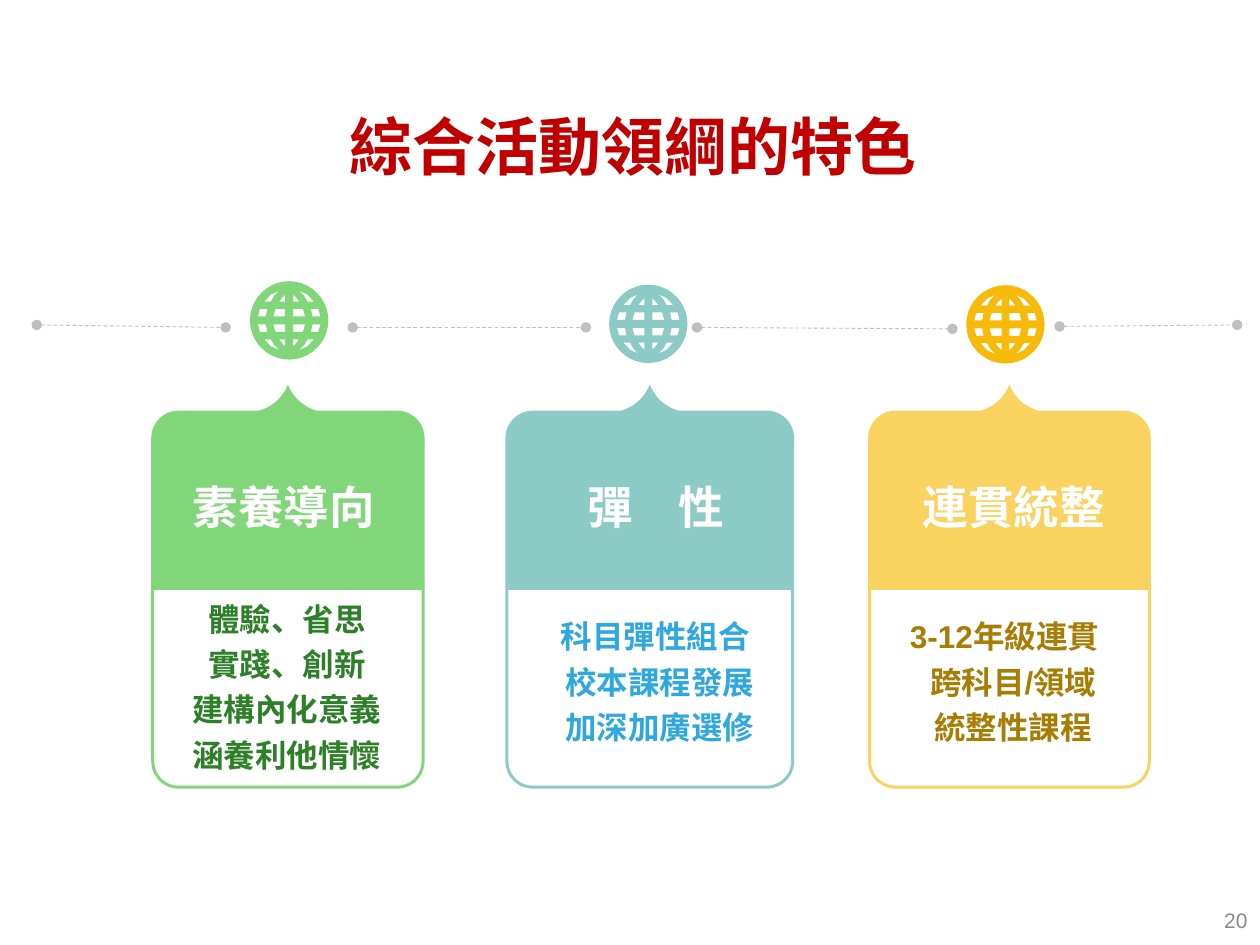
from itertools import product
from typing import NamedTuple

from lxml.etree import SubElement
from pptx import Presentation
from pptx.dml.color import RGBColor
from pptx.enum.dml import MSO_LINE
from pptx.enum.shapes import MSO_CONNECTOR
from pptx.enum.text import MSO_ANCHOR as Anchor, PP_ALIGN as Align
from pptx.oxml.ns import qn
from pptx.util import Cm, Pt

COLORS = {
    "title": "C00000", "white": "FFFFFF", "line": "BFBFBF", "number": "898989",
    "green": "81D67A", "green_text": "2E8028",
    "teal": "8CCBC5", "teal_text": "2FA7DF",
    "yellow": "FAD25F", "yellow_text": "A77D05", "amber": "F7BA0B",
}
Point = tuple[float, float]
TIP_Y, CARD_TOP, HEADER_BOTTOM, CARD_BOTTOM = 7.75, 8.28, 11.89, 15.9
CORNER, BORDER = 0.55, 0.06
GLOBE_RADIUS = 0.79
ARC = 0.55
GLOBE_CELLS: list[list[Point]] = [
    [(0.08, 0.08), (0.32, 0.08), (0.28, 0.23), (0.08, 0.23)],
    [(0.47, 0.08), (0.63, 0.08), (0.59, 0.23), (0.44, 0.23)],
    [(0.08, 0.38), (0.2, 0.38), (0.15, 0.45), (0.08, 0.52)],
    [(0.37, 0.38), (0.5, 0.38), (0.37, 0.52), (0.2, 0.6), (0.3, 0.5)],
]


class Line(NamedTuple):
    text: str
    indent: float = 0


class Card(NamedTuple):
    left: float
    width: float
    fill: str
    globe: Point
    globe_fill: str
    heading: str
    heading_left: float
    text_color: str
    body_left: float
    body_top: float
    lines: list[Line]


CARDS = [
    Card(3.05, 5.51, "green", (5.83, 6.46), "green", "素養導向", 3.63,
         "green_text", 3.53, 11.81,
         [Line("體驗、省思", -5), Line("實踐、創新"),
          Line("建構內化意義"), Line("涵養利他情懷")]),
    Card(10.19, 5.82, "teal", (13.07, 6.53), "teal", "彈　性", 11.13,
         "teal_text", 10.87, 12.17,
         [Line("科目彈性組合"), Line("校本課程發展", 5), Line("加深加廣選修", 5)]),
    Card(17.5, 5.7, "yellow", (20.27, 6.54), "amber", "連貫統整", 18.34,
         "yellow_text", 17.91, 12.17,
         [Line("3-12年級連貫"), Line("跨科目/領域", 10), Line("統整性課程", 10)]),
]
LINKS: list[tuple[Point, Point]] = [
    ((0.74, 6.55), (4.55, 6.6)),
    ((7.11, 6.6), (11.81, 6.6)),
    ((14.05, 6.6), (19.2, 6.63)),
    ((21.36, 6.58), (24.94, 6.55)),
]


def rgb(name: str) -> RGBColor:
    return RGBColor.from_string(COLORS[name])


def curve(a: Point, b: Point, c: Point, d: Point, steps: int = 10) -> list[Point]:
    points = []
    for i in range(steps + 1):
        t = i / steps
        u = 1 - t
        x, y = (u**3 * p + 3 * u * u * t * q + 3 * u * t * t * r + t**3 * s
                for p, q, r, s in zip(a, b, c, d))
        points.append((x, y))
    return points


def corner(start: Point, apex: Point, end: Point) -> list[Point]:
    first, second = (tuple(e + ARC * (v - e) for e, v in zip(edge, apex))
                     for edge in (start, end))
    return curve(start, first, second, end)


def rounded_bottom(left: float, right: float, bottom: float, radius: float) -> list[Point]:
    return (corner((right, bottom - radius), (right, bottom), (right - radius, bottom))
            + corner((left + radius, bottom), (left, bottom), (left, bottom - radius)))


def add_outline(slide, contours: list[list[Point]], color: str) -> None:
    scaled = [[(Cm(x), Cm(y)) for x, y in contour] for contour in contours]
    fb = slide.shapes.build_freeform(*scaled[0][0])
    for i, contour in enumerate(scaled):
        if i:
            fb.move_to(*contour[0])
        fb.add_line_segments(contour[1:], close=True)
    sp = fb.convert_to_shape()
    sp.shadow.inherit = False
    sp.fill.solid()
    sp.fill.fore_color.rgb = rgb(color)
    sp.line.fill.background()


def add_card_frame(slide, card: Card) -> None:
    left, right, top = card.left, card.left + card.width, CARD_TOP
    mid = left + card.width / 2
    pointer = curve((mid - 0.58, top), (mid - 0.3, top - 0.08),
                    (mid - 0.09, top - 0.28), (mid, TIP_Y))
    outer = (corner((left, top + CORNER), (left, top), (left + CORNER, top))
             + pointer + [(2 * mid - x, y) for x, y in reversed(pointer)]
             + corner((right - CORNER, top), (right, top), (right, top + CORNER))
             + rounded_bottom(left, right, CARD_BOTTOM, CORNER))
    inner_left, inner_right = left + BORDER, right - BORDER
    window = [(inner_left, HEADER_BOTTOM), (inner_right, HEADER_BOTTOM)]
    window += rounded_bottom(inner_left, inner_right, CARD_BOTTOM - BORDER, CORNER - BORDER)
    add_outline(slide, [outer, window], card.fill)


def add_globe(slide, center: Point, color: str) -> None:
    cx, cy = center
    r = GLOBE_RADIUS
    disc = [(cx + sx * x, cy + sy * y)
            for sx, sy, step in ((1, 1, 1), (-1, 1, -1), (-1, -1, 1), (1, -1, -1))
            for x, y in corner((r, 0), (r, r), (0, r))[::step]]
    cells = [[(cx + sx * x, cy + sy * y) for x, y in cell]
             for cell, sx, sy in product(GLOBE_CELLS, (1, -1), (1, -1))]
    add_outline(slide, [disc, *cells], color)


def add_link(slide, start: Point, end: Point) -> None:
    cxn = slide.shapes.add_connector(
        MSO_CONNECTOR.STRAIGHT, *(Cm(v) for v in (*start, *end)))
    cxn.line.color.rgb = rgb("line")
    cxn.line.width = Pt(0.5)
    cxn.line.dash_style = MSO_LINE.DASH
    ln = cxn.line._get_or_add_ln()
    for tag in ("a:headEnd", "a:tailEnd"):
        SubElement(ln, qn(tag), type="oval")
    SubElement(cxn._element.spPr, qn("a:effectLst"))


def set_font(p, size: float, color: str, bold: bool = True, name: str = "Arial") -> None:
    p.font.name = name
    p.font.size = Pt(size)
    p.font.bold = bold
    p.font.color.rgb = rgb(color)


def add_text(slide, box: tuple[float, float, float, float], lines: list[Line],
             size: float, color: str, spacing: float = 1.2,
             align: Align = Align.CENTER, bold: bool = True):
    tf = slide.shapes.add_textbox(*(Cm(v) for v in box)).text_frame
    tf.word_wrap = True
    for i, line in enumerate(lines):
        p = tf.add_paragraph() if i else tf.paragraphs[0]
        p.text = line.text
        p.alignment = align
        p.line_spacing = spacing
        if line.indent:
            side = "marL" if line.indent > 0 else "marR"
            p._p.get_or_add_pPr().set(side, str(Pt(abs(line.indent))))
        set_font(p, size, color, bold)
    return tf


def add_title(slide, text: str) -> None:
    sp = slide.shapes.title
    sp.left, sp.top, sp.width, sp.height = Cm(3.05), Cm(2.03), Cm(19.41), Cm(1.8)
    tf = sp.text_frame
    tf.text = text
    tf.vertical_anchor = Anchor.TOP
    p = tf.paragraphs[0]
    p.alignment = Align.CENTER
    set_font(p, 36, "title", name="Noto Sans CJK SC")


def main() -> None:
    prs = Presentation()
    prs.slide_width, prs.slide_height = Cm(25.4), Cm(19.05)
    slide = prs.slides.add_slide(prs.slide_layouts[5])
    add_title(slide, "綜合活動領綱的特色")
    for start, end in LINKS:
        add_link(slide, start, end)
    for card in CARDS:
        add_card_frame(slide, card)
        add_globe(slide, card.globe, card.globe_fill)
        add_text(slide, (card.heading_left, 9.32, 4.19, 1.47),
                 [Line(card.heading)], 26, "white")
        add_text(slide, (card.body_left, card.body_top, 4.68, 0.25 + 0.93 * len(card.lines)),
                 card.lines, 18, card.text_color)
    number = add_text(slide, (19.69, 18.03, 5.71, 1.02), [Line("20")], 12, "number",
                      spacing=1, align=Align.RIGHT, bold=False)
    number.vertical_anchor = Anchor.MIDDLE
    prs.save("out.pptx")


if __name__ == "__main__":
    main()
